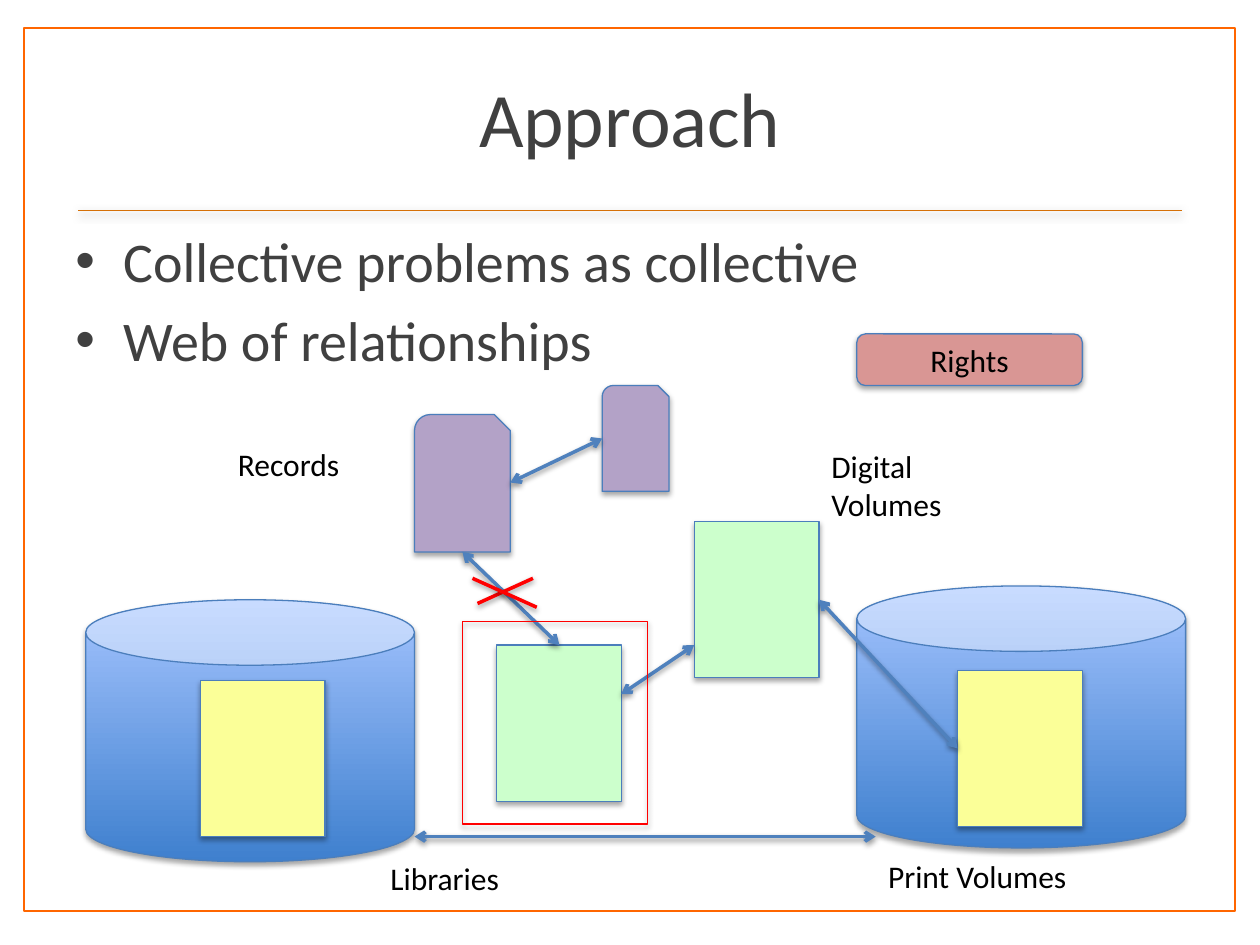
from pptx import Presentation
from pptx.dml.color import RGBColor
from pptx.enum.shapes import MSO_CONNECTOR, MSO_SHAPE
from pptx.enum.text import MSO_ANCHOR, PP_ALIGN
from pptx.oxml import parse_xml
from pptx.oxml.ns import nsdecls, qn
from pptx.util import Inches, Pt

FONT = "Calibri"
WHITE = RGBColor(0xFF, 0xFF, 0xFF)
BLACK = RGBColor(0x00, 0x00, 0x00)
DARK_GRAY = RGBColor(0x40, 0x40, 0x40)
ORANGE = RGBColor(0xFF, 0x66, 0x00)
RULE_ORANGE = RGBColor(0xD5, 0x70, 0x07)
OUTLINE_BLUE = RGBColor(0x4B, 0x7E, 0xBC)
ARROW_BLUE = RGBColor(0x4F, 0x81, 0xBD)
CYLINDER_DARK = RGBColor(0x3F, 0x80, 0xCE)
CYLINDER_LIGHT = RGBColor(0xA4, 0xC4, 0xFF)
GREEN = RGBColor(0xCC, 0xFF, 0xCC)
PURPLE = RGBColor(0xB3, 0xA2, 0xC7)
YELLOW = RGBColor(0xFB, 0xFF, 0x98)
PINK = RGBColor(0xD9, 0x96, 0x94)
RED = RGBColor(0xFF, 0x00, 0x00)

VOLUME_SIZE = (0.99, 1.24)
CYLINDER_SIZE = (2.61, 2.08)


def add_shadow(shape, blur=3.1, distance=1.8, opacity=35):
    """Give the shape a soft black shadow straight below it."""
    properties = shape._element.spPr
    for effects in properties.findall(qn("a:effectLst")):
        properties.remove(effects)
    properties.append(parse_xml(
        f'<a:effectLst {nsdecls("a")}><a:outerShdw blurRad="{Pt(blur)}" '
        f'dist="{Pt(distance)}" dir="5400000" rotWithShape="0">'
        f'<a:srgbClr val="000000"><a:alpha val="{opacity * 1000}"/></a:srgbClr>'
        '</a:outerShdw></a:effectLst>'))


def add_block(slide, kind, left, top, width, height, fill=None,
              line=OUTLINE_BLUE, line_width=0.75, shadow=True):
    shape = slide.shapes.add_shape(
        kind, Inches(left), Inches(top), Inches(width), Inches(height))
    shape.shadow.inherit = False
    if fill is None:
        shape.fill.background()
    else:
        shape.fill.solid()
        shape.fill.fore_color.rgb = fill
    shape.line.color.rgb = line
    shape.line.width = Pt(line_width)
    if shadow:
        add_shadow(shape)
    return shape


def add_volume(slide, left, top, fill):
    add_block(slide, MSO_SHAPE.RECTANGLE, left, top, *VOLUME_SIZE, fill)


def add_cylinder(slide, left, top):
    cylinder = add_block(slide, MSO_SHAPE.CAN, left, top, *CYLINDER_SIZE)
    cylinder.fill.gradient()
    cylinder.fill.gradient_angle = 90
    stops = cylinder.fill.gradient_stops
    for stop, position, color in zip(stops, (0, 1), (CYLINDER_DARK, CYLINDER_LIGHT)):
        stop.position = position
        stop.color.rgb = color


def add_line(container, start, end, color=ARROW_BLUE, width=2, arrows=False, **shadow):
    x1, y1, x2, y2 = (Inches(value) for value in (*start, *end))
    connector = container.shapes.add_connector(MSO_CONNECTOR.STRAIGHT, x1, y1, x2, y2)
    connector.line.color.rgb = color
    connector.line.width = Pt(width)
    if arrows:
        outline = connector._element.spPr.find(qn("a:ln"))
        for end_name in ("headEnd", "tailEnd"):
            outline.append(parse_xml(f'<a:{end_name} {nsdecls("a")} type="arrow"/>'))
    add_shadow(connector, **(shadow or {"distance": 1.6, "opacity": 38}))


def write_text(shape, *lines, size=18, color=BLACK, align=PP_ALIGN.LEFT,
               anchor=MSO_ANCHOR.TOP, bullet=False, space_before=0):
    frame = shape.text_frame
    frame.word_wrap = True
    frame.vertical_anchor = anchor
    for index, line in enumerate(lines):
        paragraph = frame.add_paragraph() if index else frame.paragraphs[0]
        paragraph.text = line
        paragraph.alignment = align
        if index:
            paragraph.space_before = Pt(space_before)
        if bullet:
            properties = paragraph._p.get_or_add_pPr()
            properties.set("marL", str(Inches(0.38)))
            properties.set("indent", str(Inches(-0.38)))
            properties.append(parse_xml(f'<a:buFont {nsdecls("a")} typeface="Arial"/>'))
            properties.append(parse_xml(f'<a:buChar {nsdecls("a")} char="•"/>'))
        for run in paragraph.runs:
            run.font.name = FONT
            run.font.size = Pt(size)
            run.font.color.rgb = color


def add_text(slide, left, top, width, height, *lines, **text_format):
    box = slide.shapes.add_textbox(
        Inches(left), Inches(top), Inches(width), Inches(height))
    write_text(box, *lines, **text_format)


def main():
    presentation = Presentation()
    presentation.slide_width = Inches(10)
    presentation.slide_height = Inches(7.5)
    slide = presentation.slides.add_slide(presentation.slide_layouts[6])

    add_block(slide, MSO_SHAPE.RECTANGLE, 0.19, 0.22, 9.61, 7.01, WHITE,
              line=ORANGE, line_width=1, shadow=False)
    add_line(slide, (0.62, 1.67), (9.38, 1.67), RULE_ORANGE, 1,
             blur=5, distance=1.8, opacity=35)
    add_text(slide, 0.5, 0.3, 9, 1.25, "Approach", size=44, color=DARK_GRAY,
             align=PP_ALIGN.CENTER, anchor=MSO_ANCHOR.MIDDLE)
    add_text(slide, 0.5, 1.75, 9, 5.35, "Collective problems as collective",
             "Web of relationships", size=32, color=DARK_GRAY, bullet=True,
             space_before=6.4)

    add_volume(slide, 3.94, 5.12, GREEN)
    for record in ((3.29, 3.29, 0.76, 1.09), (4.78, 3.06, 0.53, 0.84)):
        add_block(slide, MSO_SHAPE.SNIP_ROUND_RECTANGLE, *record, PURPLE)
    add_volume(slide, 5.51, 4.14, GREEN)
    add_cylinder(slide, 0.68, 4.76)
    add_volume(slide, 1.59, 5.4, YELLOW)
    add_cylinder(slide, 6.8, 4.65)
    add_volume(slide, 7.6, 5.32, YELLOW)

    for start, end in (
        ((3.67, 4.38), (4.44, 5.12)),
        ((4.05, 3.83), (4.78, 3.48)),
        ((4.93, 5.51), (5.51, 5.12)),
        ((7.6, 5.94), (6.5, 4.76)),
        ((3.29, 6.64), (6.95, 6.64)),
    ):
        add_line(slide, start, end, arrows=True)

    for label, left, top, width, height in (
        ("Records", 1.79, 3.48, 1.29, 0.4),
        ("Digital Volumes", 6.5, 3.5, 1.29, 0.71),
        ("Print Volumes", 6.95, 6.75, 2.26, 0.4),
        ("Libraries", 3, 6.77, 2.26, 0.4),
    ):
        add_text(slide, left, top, width, height, label)

    add_block(slide, MSO_SHAPE.RECTANGLE, 3.67, 4.93, 1.47, 1.61, line=RED)
    cross = slide.shapes.add_group_shape()
    add_line(cross, (3.79, 4.79), (4.23, 4.59), RED)
    add_line(cross, (3.75, 4.59), (4.26, 4.82), RED)

    rights = add_block(slide, MSO_SHAPE.ROUNDED_RECTANGLE, 6.8, 2.65, 1.79, 0.41, PINK)
    write_text(rights, "Rights", align=PP_ALIGN.CENTER, anchor=MSO_ANCHOR.MIDDLE)

    presentation.save("out.pptx")


if __name__ == "__main__":
    main()
